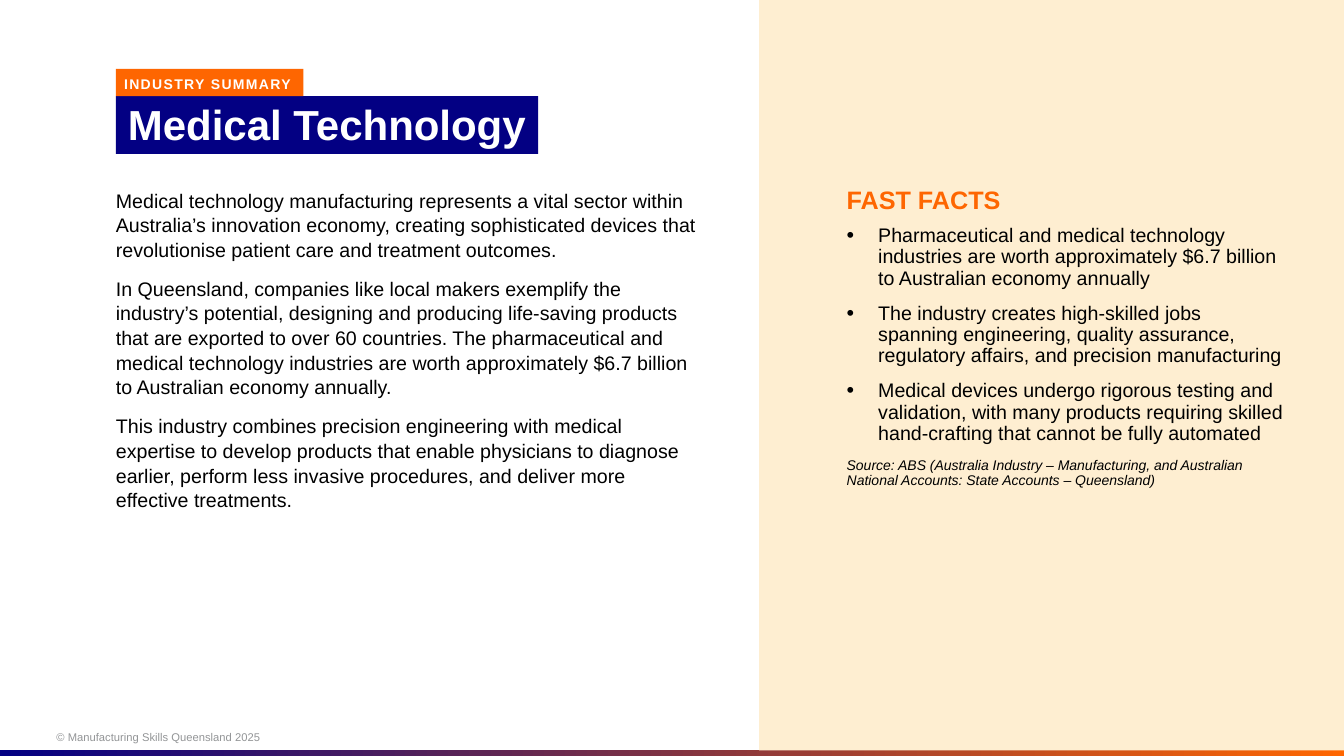
from dataclasses import dataclass

from lxml import etree
from pptx import Presentation
from pptx.dml.color import RGBColor
from pptx.enum.shapes import MSO_SHAPE
from pptx.enum.text import MSO_ANCHOR, MSO_AUTO_SIZE, PP_ALIGN
from pptx.oxml.ns import qn
from pptx.util import Pt

RECT = MSO_SHAPE.RECTANGLE
TOP, MIDDLE = MSO_ANCHOR.TOP, MSO_ANCHOR.MIDDLE
LEFT = PP_ALIGN.LEFT
FIXED = MSO_AUTO_SIZE.NONE

NAVY = RGBColor(0x03, 0x00, 0x83)
ORANGE = RGBColor(0xFE, 0x66, 0x01)
CREAM = RGBColor(0xFE, 0xEE, 0xD1)
GREY = RGBColor(0x93, 0x95, 0x97)
BLACK = RGBColor(0, 0, 0)
WHITE = RGBColor(0xFF, 0xFF, 0xFF)

WIDTH, HEIGHT = 960, 540
MARGIN, SIDE, FACTS, BODY = 82.8, 542.2, 604.8, 133.9
INDENT = 22.5


@dataclass(frozen=True)
class Style:
    size: float
    color: RGBColor = BLACK
    bold: bool = False
    italic: bool = False
    line: float = 0.9
    bullet: bool = False
    track: int = 0


@dataclass(frozen=True)
class Para:
    text: str
    style: Style


@dataclass(frozen=True)
class Box:
    left: float
    top: float
    width: float
    height: float
    paras: tuple[Para, ...]
    fill: RGBColor | None = None
    inset: tuple[float, float, float, float] = (0, 0, 0, 0)
    anchor: MSO_ANCHOR = TOP
    wrap: bool = True


PROSE = Style(14, line=1.05)
FACT = Style(14, bullet=True)

BOXES = (
    Box(40.3, 522, 324, 9.4,
        (Para("© Manufacturing Skills Queensland 2025", Style(8, GREY, line=1)),),
        anchor=MIDDLE),
    Box(MARGIN, 68.7, 301.7, 41.3,
        (Para("Medical Technology", Style(30, WHITE, bold=True)),),
        NAVY, (8.6, 5.8, 5.8, 2.9), MIDDLE, False),
    Box(MARGIN, 49.3, 134, 19.4,
        (Para("INDUSTRY SUMMARY", Style(10, WHITE, bold=True, track=100)),),
        ORANGE, (5.8, 5.8, 5.8, 2.9), wrap=False),
    Box(MARGIN, BODY, 417.6, 224, (
        Para("Medical technology manufacturing represents a vital sector within "
             "Australia’s innovation economy, creating sophisticated devices that "
             "revolutionise patient care and treatment outcomes.", PROSE),
        Para("In Queensland, companies like local makers exemplify the industry’s "
             "potential, designing and producing life-saving products that are "
             "exported to over 60 countries. The pharmaceutical and medical "
             "technology industries are worth approximately $6.7 billion to "
             "Australian economy annually.", PROSE),
        Para("This industry combines precision engineering with medical expertise "
             "to develop products that enable physicians to diagnose earlier, "
             "perform less invasive procedures, and deliver more effective "
             "treatments.", PROSE))),
    Box(FACTS, BODY, 111, 19.4,
        (Para("FAST FACTS", Style(18, ORANGE, bold=True)),), wrap=False),
    Box(FACTS, 161.3, 313.2, 189.4, (
        Para("Pharmaceutical and medical technology industries are worth "
             "approximately $6.7 billion to Australian economy annually", FACT),
        Para("The industry creates high-skilled jobs spanning engineering, quality "
             "assurance, regulatory affairs, and precision manufacturing", FACT),
        Para("Medical devices undergo rigorous testing and validation, with many "
             "products requiring skilled hand-crafting that cannot be fully "
             "automated", FACT),
        Para("Source: ABS (Australia Industry – Manufacturing, and Australian "
             "National Accounts: State Accounts – Queensland)",
             Style(10, italic=True)))),
)


def add_rect(slide, left: float, top: float, width: float, height: float):
    rect = slide.shapes.add_shape(RECT, Pt(left), Pt(top), Pt(width), Pt(height))
    rect.shadow.inherit = False
    rect.line.fill.background()
    return rect


def add_bullet(par) -> None:
    props = par._p.get_or_add_pPr()
    props.set("marL", str(Pt(INDENT)))
    props.set("indent", str(-Pt(INDENT)))
    color = etree.SubElement(props, qn("a:buClr"))
    etree.SubElement(color, qn("a:srgbClr"), val=str(BLACK))
    etree.SubElement(props, qn("a:buSzPct"), val="110000")
    etree.SubElement(props, qn("a:buFont"), typeface="Arial")
    etree.SubElement(props, qn("a:buChar"), char="•")


def add_para(par, para: Para, first: bool) -> None:
    style = para.style
    run = par.add_run()
    run.text = para.text
    if style.track:
        run._r.get_or_add_rPr().set("spc", str(style.track))
    if style.bullet:
        add_bullet(par)
    par.alignment = LEFT
    par.line_spacing = style.line
    par.space_before = Pt(0 if first else 10)
    font = par.font
    font.name = "Arial"
    font.size = Pt(style.size)
    font.bold = style.bold
    font.italic = style.italic
    font.color.rgb = style.color


def add_box(slide, box: Box) -> None:
    if box.fill is None:
        shape = slide.shapes.add_textbox(
            Pt(box.left), Pt(box.top), Pt(box.width), Pt(box.height))
    else:
        shape = add_rect(slide, box.left, box.top, box.width, box.height)
        shape.fill.solid()
        shape.fill.fore_color.rgb = box.fill
    frame = shape.text_frame
    frame.auto_size = FIXED
    frame.word_wrap = box.wrap
    frame.vertical_anchor = box.anchor
    (frame.margin_left, frame.margin_top,
     frame.margin_right, frame.margin_bottom) = map(Pt, box.inset)
    for i, para in enumerate(box.paras):
        par = frame.add_paragraph() if i else frame.paragraphs[0]
        add_para(par, para, i == 0)


def main() -> None:
    deck = Presentation()
    deck.slide_width, deck.slide_height = Pt(WIDTH), Pt(HEIGHT)
    slide = deck.slides.add_slide(deck.slide_layouts[6])

    strip = add_rect(slide, 0, HEIGHT - 4, WIDTH, 4)
    strip.fill.gradient()
    strip.fill.gradient_angle = 0
    for stop, color in zip(strip.fill.gradient_stops, (NAVY, ORANGE)):
        stop.color.rgb = color

    panel = add_rect(slide, SIDE, 0, WIDTH - SIDE, HEIGHT - 4)
    panel.fill.solid()
    panel.fill.fore_color.rgb = CREAM

    for box in BOXES:
        add_box(slide, box)
    deck.save("out.pptx")


if __name__ == "__main__":
    main()
